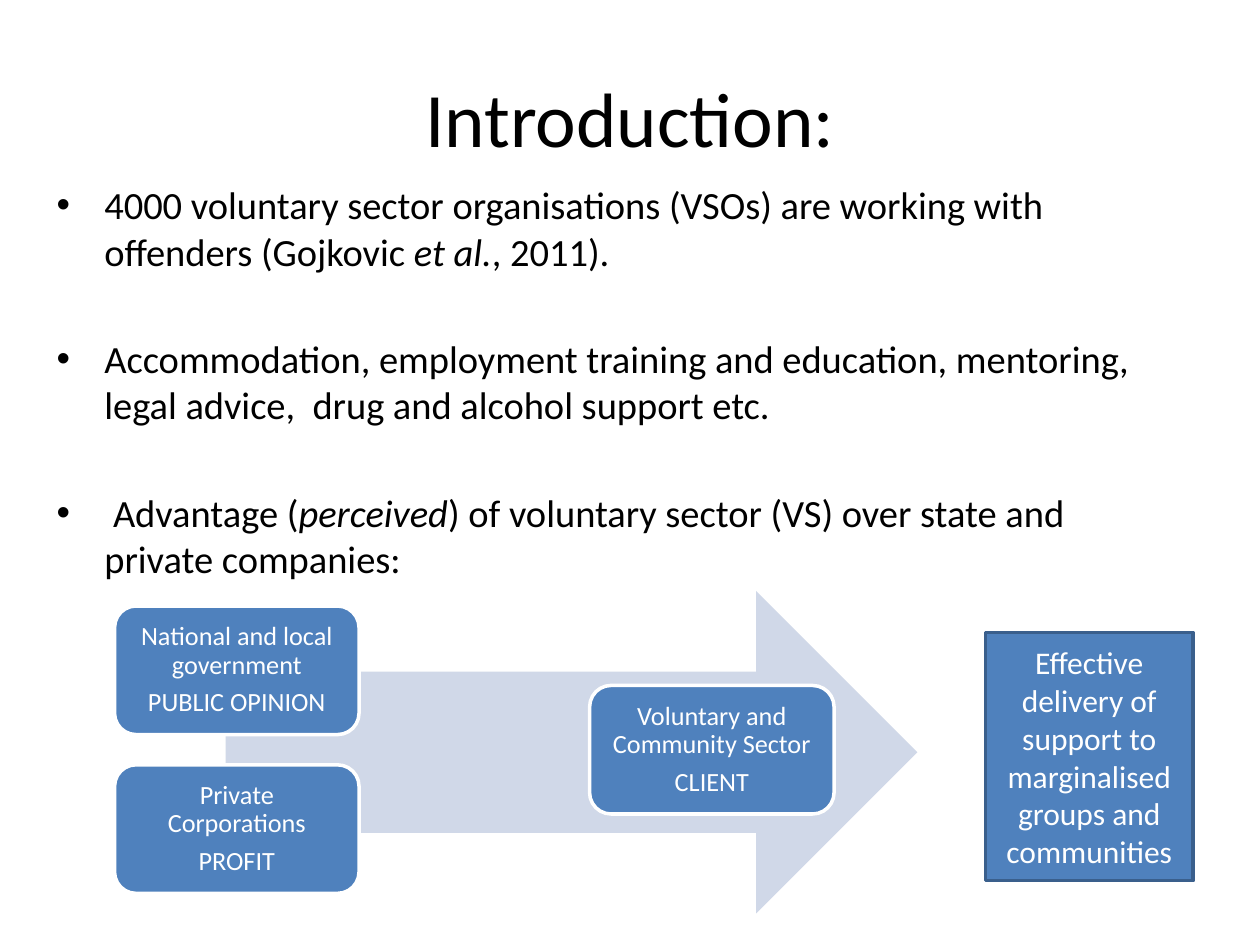
"""Build the introduction slide on the voluntary sector."""
from lxml.etree import SubElement
from pptx import Presentation
from pptx.dml.color import RGBColor
from pptx.enum.shapes import MSO_SHAPE
from pptx.enum.text import MSO_ANCHOR, PP_ALIGN
from pptx.oxml.ns import qn
from pptx.util import Inches, Pt

FONT = "Calibri"
COLORS = {"text": "000000", "light": "FFFFFF", "box": "4F81BD",
          "edge": "3A5F8C", "arrow": "D0D8E8"}
TITLE = "Introduction:"
BULLETS = [
    [("4000 voluntary sector organisations (VSOs) are working with offenders (Gojkovic ", False),
     ("et al.", True), (", 2011).", False)],
    [("Accommodation, employment training and education, mentoring, legal advice,  "
      "drug and alcohol support etc.", False)],
    [(" Advantage (", False), ("perceived", True),
     (") of voluntary sector (VS) over state and private companies:", False)],
]
ARROW = (1.79, 4.69, 5.49, 2.56)
CARD_SIZE = (1.94, 1.02)
CARDS = [
    (0.91, 6.07, ["Private Corporations", "PROFIT"]),
    (0.91, 4.81, ["National and local government", "PUBLIC OPINION"]),
    (4.68, 5.44, ["Voluntary and Community Sector", "CLIENT"]),
]
OUTCOME = "Effective delivery of support to marginalised groups and communities"


def color(name):
    return RGBColor.from_string(COLORS[name])


def add_run(p, text, size, name, italic=False):
    r = p.add_run()
    r.text = text
    r.font.name, r.font.size, r.font.italic = FONT, Pt(size), italic
    r.font.color.rgb = color(name)


def add_lines(tf, lines, size, name):
    tf.word_wrap = True
    tf.vertical_anchor = MSO_ANCHOR.MIDDLE
    for i, line in enumerate(lines):
        p = tf.paragraphs[0] if i == 0 else tf.add_paragraph()
        p.alignment = PP_ALIGN.CENTER
        add_run(p, line, size, name)


def add_box(s, kind, at, fill, edge=None):
    sp = s.shapes.add_shape(kind, *map(Inches, at))
    sp.shadow.inherit = False
    sp.fill.solid()
    sp.fill.fore_color.rgb = color(fill)
    if edge:
        sp.line.color.rgb = color(edge)
        sp.line.width = Pt(2)
    else:
        sp.line.fill.background()
    return sp


def add_bullets(s):
    tf = s.shapes.add_textbox(*map(Inches, (0.35, 0.92, 8.98, 5.51))).text_frame
    tf.word_wrap = True
    tf.margin_top = Inches(0.52)
    for i, runs in enumerate(BULLETS):
        p = tf.paragraphs[0] if i == 0 else tf.add_paragraph()
        p.space_before = Pt(35 if i else 0)
        pPr = p._p.get_or_add_pPr()
        pPr.set("marL", str(Inches(0.38)))
        pPr.set("indent", str(-Inches(0.38)))
        SubElement(pPr, qn("a:buFont")).set("typeface", "Arial")
        SubElement(pPr, qn("a:buChar")).set("char", "•")
        for text, italic in runs:
            add_run(p, text, 22, "text", italic)


def add_card(s, left, top, lines):
    sp = add_box(s, MSO_SHAPE.ROUNDED_RECTANGLE, (left, top, *CARD_SIZE), "box", "light")
    tf = sp.text_frame
    tf.margin_left = tf.margin_right = tf.margin_top = tf.margin_bottom = Inches(0.06)
    add_lines(tf, lines, 15, "light")
    for p in tf.paragraphs:
        p.line_spacing = 0.9
        p.space_after = Pt(5.25)


def main():
    prs = Presentation()
    prs.slide_width, prs.slide_height = Inches(10), Inches(7.5)
    s = prs.slides.add_slide(prs.slide_layouts[6])
    title = s.shapes.add_textbox(*map(Inches, (0.5, 0.3, 9, 1.25)))
    add_lines(title.text_frame, [TITLE], 44, "text")
    add_bullets(s)
    add_box(s, MSO_SHAPE.RIGHT_ARROW, ARROW, "arrow")
    for card in CARDS:
        add_card(s, *card)
    outcome = add_box(s, MSO_SHAPE.RECTANGLE, (7.82, 5.02, 1.65, 1.97), "box", "edge")
    add_lines(outcome.text_frame, [OUTCOME], 18, "light")
    prs.save("out.pptx")


if __name__ == "__main__":
    main()
